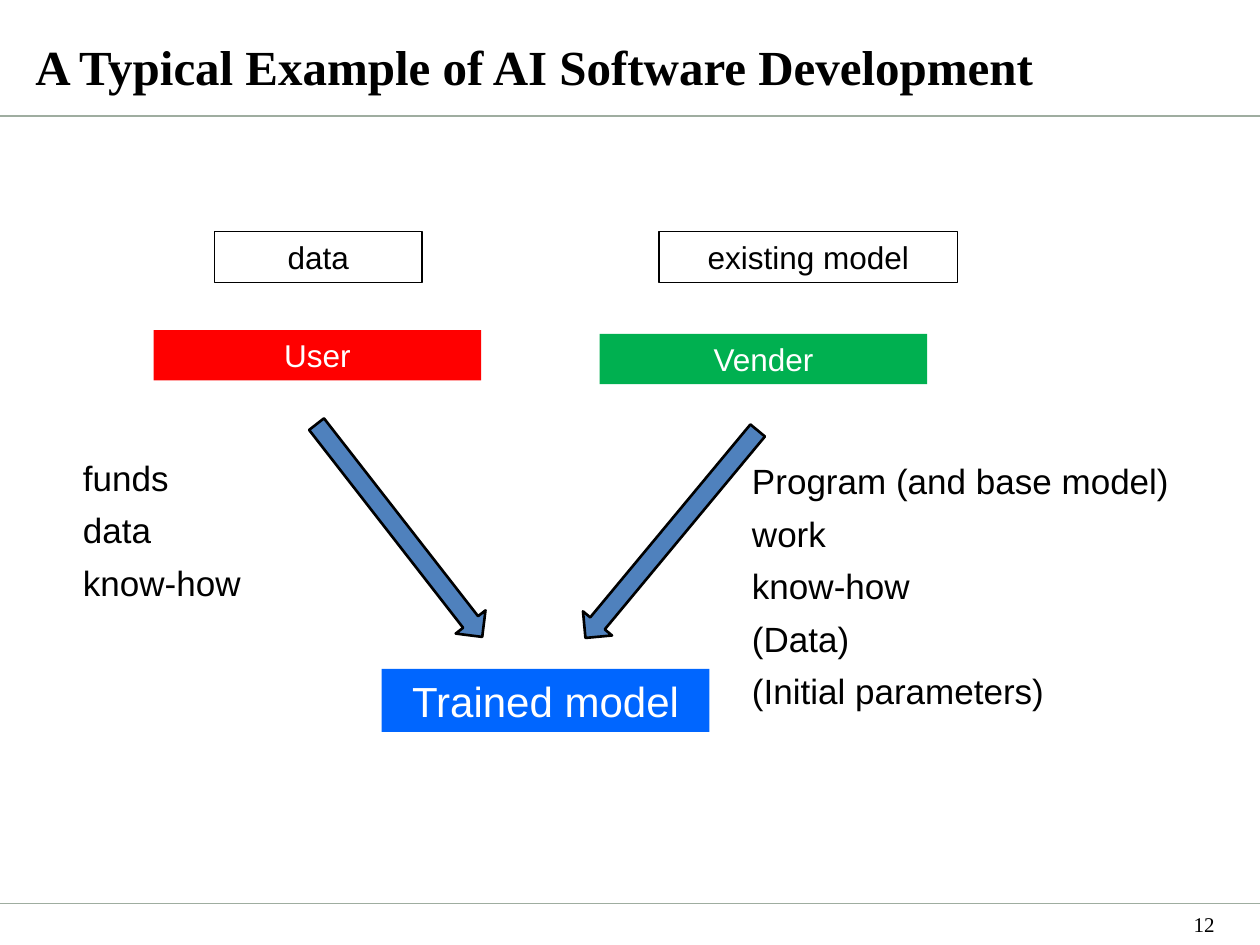
from pptx import Presentation
from pptx.dml.color import RGBColor
from pptx.enum.shapes import MSO_CONNECTOR as Connector, MSO_SHAPE as Shape
from pptx.enum.text import MSO_ANCHOR as Anchor, PP_ALIGN as Align
from pptx.util import Inches, Pt
from lxml.etree import SubElement
from pptx.oxml.ns import qn

TITLE = "A Typical Example of AI Software Development"
PAGE_NUMBER = "12"
SERIF, SANS = "Times New Roman", "Arial"
BLACK, WHITE, RULE_GRAY, ARROW_BLUE = "000000", "FFFFFF", "9FADA0", "4F81BD"

RULE_TOPS = [0.92, 7.17]
ARROWS = [(3.02, 3.14, 322.1), (5.18, 3.17, 39.7)]
ARROW_SIZE = (0.3, 2.14)
PARTIES = [
    ("User", (1.22, 2.62, 2.6, 0.4), "FF0000", 18),
    ("Vender", (4.76, 2.65, 2.6, 0.4), "00B050", 18),
    ("Trained model", (3.03, 5.31, 2.6, 0.5), "0066FF", 24),
]
INPUTS = [
    ("data", (1.7, 1.84, 1.65, 0.4)),
    ("existing model", (5.23, 1.84, 2.37, 0.4)),
]
CONTRIBUTIONS = [
    (["Program (and base model)", "work", "know-how", "(Data)", "(Initial parameters)"],
     (5.87, 3.6, 3.53, 2.12)),
    (["funds", "data", "know-how"], (0.56, 3.57, 2.6, 1.28)),
]


def color(hex_value):
    return RGBColor.from_string(hex_value)


def write(frame, lines, size, font=SANS, ink=BLACK, align=Align.LEFT,
          anchor=Anchor.TOP, bold=False, gap=0, wrap=True):
    frame.word_wrap = wrap
    frame.vertical_anchor = anchor
    for index, line in enumerate(lines):
        paragraph = frame.paragraphs[0] if index == 0 else frame.add_paragraph()
        paragraph.text = line
        paragraph.alignment = align
        paragraph.space_before = Pt(gap if index else 0)
        paragraph.font.size = Pt(size)
        paragraph.font.name = font
        paragraph.font.bold = bold
        paragraph.font.color.rgb = color(ink)


def add_text(slide, place, lines, size, inset=True, **style):
    frame = slide.shapes.add_textbox(*map(Inches, place)).text_frame
    if not inset:
        frame.margin_left = frame.margin_right = frame.margin_top = frame.margin_bottom = 0
    write(frame, lines, size, **style)


def add_block(slide, kind, place, fill=None, line_width=None):
    block = slide.shapes.add_shape(kind, *map(Inches, place))
    block.shadow.inherit = False
    if fill:
        block.fill.solid()
        block.fill.fore_color.rgb = color(fill)
    else:
        block.fill.background()
    if line_width:
        block.line.color.rgb = color(BLACK)
        block.line.width = Pt(line_width)
    else:
        block.line.fill.background()
    return block


def add_rule(slide, top):
    rule = slide.shapes.add_connector(
        Connector.STRAIGHT, 0, Inches(top), Inches(10), Inches(top))
    rule.line.color.rgb = color(RULE_GRAY)
    rule.line.width = Pt(1)
    SubElement(rule._element.spPr, qn("a:effectLst"))


def main():
    """Build the slide on AI software development."""
    deck = Presentation()
    deck.slide_width, deck.slide_height = Inches(10), Inches(7.5)
    slide = deck.slides.add_slide(deck.slide_layouts[6])

    for top in RULE_TOPS:
        add_rule(slide, top)
    add_text(slide, (9.17, 7.23, 0.47, 0.21), [PAGE_NUMBER], 12, inset=False,
             font=SERIF, align=Align.RIGHT, anchor=Anchor.MIDDLE)
    add_text(slide, (0.28, 0.19, 8.98, 0.57), [TITLE], 28, inset=False,
             font=SERIF, anchor=Anchor.BOTTOM, bold=True)

    for left, top, angle in ARROWS:
        arrow = add_block(slide, Shape.DOWN_ARROW, (left, top, *ARROW_SIZE), ARROW_BLUE, 1.5)
        arrow.rotation = angle
    for label, place, fill, size in PARTIES:
        party = add_block(slide, Shape.RECTANGLE, place, fill)
        write(party.text_frame, [label], size, ink=WHITE,
              align=Align.CENTER, anchor=Anchor.MIDDLE)
    for lines, place in CONTRIBUTIONS:
        add_text(slide, place, lines, 20, gap=6)
    for label, place in INPUTS:
        asset = add_block(slide, Shape.RECTANGLE, place, line_width=0.75)
        write(asset.text_frame, [label], 18, align=Align.CENTER)

    deck.save("out.pptx")


if __name__ == "__main__":
    main()
